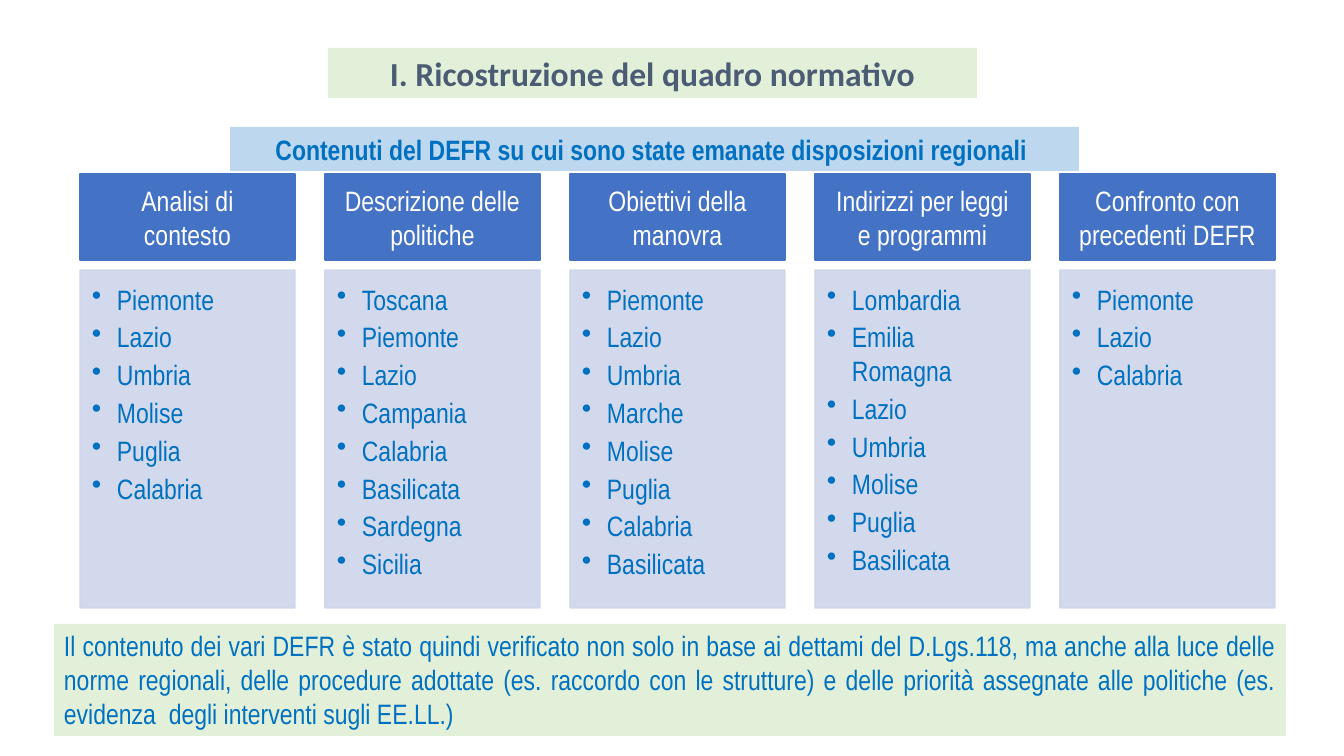
from pptx import Presentation
from pptx.dml.color import RGBColor
from pptx.enum.shapes import MSO_SHAPE
from pptx.enum.text import MSO_ANCHOR, MSO_AUTO_SIZE, PP_ALIGN
from pptx.oxml.ns import qn
from pptx.util import Emu, Pt
from lxml.etree import SubElement

TITLE = "I. Ricostruzione del quadro normativo"
SUBTITLE = "Contenuti del DEFR su cui sono state emanate disposizioni regionali "
CLOSING = (
    "Il contenuto dei vari DEFR è stato quindi verificato non solo in base ai dettami "
    "del D.Lgs.118, ma anche alla luce delle norme regionali, delle procedure adottate "
    "(es. raccordo con le strutture) e delle priorità assegnate alle politiche "
    "(es. evidenza  degli interventi sugli EE.LL.) "
)
COLUMNS = [
    ("Analisi di contesto",
     ["Piemonte", "Lazio", "Umbria", "Molise", "Puglia", "Calabria"]),
    ("Descrizione delle politiche",
     ["Toscana", "Piemonte", "Lazio", "Campania", "Calabria", "Basilicata",
      "Sardegna", "Sicilia"]),
    ("Obiettivi della manovra",
     ["Piemonte", "Lazio", "Umbria", "Marche", "Molise", "Puglia", "Calabria",
      "Basilicata"]),
    ("Indirizzi per leggi e programmi",
     ["Lombardia", "Emilia Romagna", "Lazio", "Umbria", "Molise", "Puglia",
      "Basilicata"]),
    ("Confronto con precedenti DEFR",
     ["Piemonte", "Lazio", "Calabria"]),
]

WHITE = RGBColor(0xFF, 0xFF, 0xFF)
SLATE = RGBColor(0x4B, 0x5C, 0x74)
TEXT_BLUE = RGBColor(0x00, 0x70, 0xC0)
HEADER_BLUE = RGBColor(0x44, 0x72, 0xC4)
LIST_BLUE = RGBColor(0xCF, 0xD5, 0xEA)
BANNER_BLUE = RGBColor(0xBD, 0xD7, 0xEE)
PALE_GREEN = RGBColor(0xE2, 0xF0, 0xD9)

SLIDE_WIDTH, SLIDE_HEIGHT = 1344, 756
FIRST_LEFT, COLUMN_STEP, COLUMN_WIDTH = 80, 245, 215
HEADER_TOP, HEADER_HEIGHT = 174, 86
LIST_TOP, LIST_HEIGHT = 270, 338
BULLET_INDENT = 25
BANNER_INSETS = (10, 5, 10, 5)
HEADER_INSETS = (16, 9, 16, 9)
LIST_INSETS = (12, 12, 16, 17)


def px(length):
    return Emu(round(length * 914400 / 100.8))


def add_box(page, place, fill, lines, color, insets, align=PP_ALIGN.CENTER,
            anchor=MSO_ANCHOR.TOP, font="Arial Narrow", size=20, bold=False):
    box = page.shapes.add_shape(MSO_SHAPE.RECTANGLE, *map(px, place))
    box.shadow.inherit = False
    box.fill.solid()
    box.fill.fore_color.rgb = fill
    box.line.fill.background()
    frame = box.text_frame
    frame.word_wrap = True
    frame.vertical_anchor = anchor
    (frame.margin_left, frame.margin_top,
     frame.margin_right, frame.margin_bottom) = map(px, insets)
    frame.text = "\n".join(lines)
    for para in frame.paragraphs:
        para.alignment = align
        para.font.name = font
        para.font.size = Pt(size)
        para.font.bold = bold
        para.font.color.rgb = color
    return box


def add_banner(page, place, fill, text, color, **style):
    box = add_box(page, place, fill, [text], color, BANNER_INSETS, **style)
    box.text_frame.auto_size = MSO_AUTO_SIZE.SHAPE_TO_FIT_TEXT


def outline(box, color):
    box.line.color.rgb = color
    box.line.width = Pt(1)


def soften(box):
    for color in box._element.spPr.iter(qn("a:srgbClr")):
        SubElement(color, qn("a:alpha"), val="90000")


def add_bullets(box):
    for para in box.text_frame.paragraphs:
        para.level = 1
        para.space_after = Pt(3)
        properties = para._p.get_or_add_pPr()
        properties.set("marL", str(px(BULLET_INDENT)))
        properties.set("indent", str(px(-BULLET_INDENT)))
        bullet = properties.makeelement(qn("a:buChar"), {"char": "•"})
        properties.find(qn("a:defRPr")).addprevious(bullet)


def main():
    deck = Presentation()
    deck.slide_width, deck.slide_height = px(SLIDE_WIDTH), px(SLIDE_HEIGHT)
    page = deck.slides.add_slide(deck.slide_layouts[6])

    add_banner(page, (230, 127, 849, 44), BANNER_BLUE, SUBTITLE, TEXT_BLUE, bold=True)
    for index, (heading, regions) in enumerate(COLUMNS):
        left = FIRST_LEFT + index * COLUMN_STEP
        header = add_box(page, (left, HEADER_TOP, COLUMN_WIDTH, HEADER_HEIGHT),
                         HEADER_BLUE, [heading], WHITE, HEADER_INSETS,
                         anchor=MSO_ANCHOR.MIDDLE)
        outline(header, HEADER_BLUE)
        region_list = add_box(page, (left, LIST_TOP, COLUMN_WIDTH, LIST_HEIGHT),
                              LIST_BLUE, regions, TEXT_BLUE, LIST_INSETS,
                              align=PP_ALIGN.LEFT)
        outline(region_list, LIST_BLUE)
        soften(region_list)
        add_bullets(region_list)
    add_banner(page, (54, 624, 1232, 112), PALE_GREEN, CLOSING, TEXT_BLUE,
               align=PP_ALIGN.JUSTIFY)
    add_banner(page, (328, 48, 649, 50), PALE_GREEN, TITLE, SLATE,
               font="Calibri", size=24, bold=True)
    deck.save("out.pptx")


if __name__ == "__main__":
    main()
